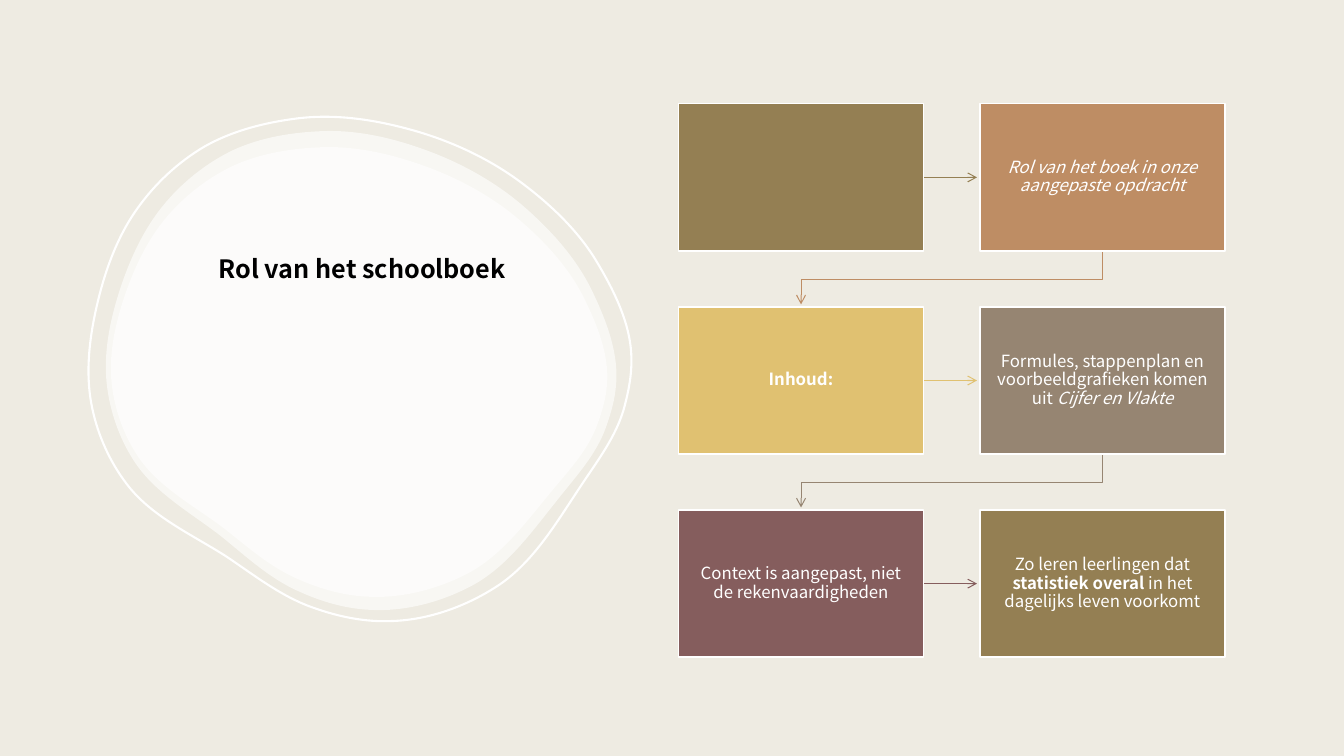
"""Builds the slide about the role of the textbook."""
from lxml import etree
from pptx import Presentation, util as u
from pptx.dml.color import RGBColor
from pptx.enum import shapes, text
from pptx.oxml.ns import qn

COLOURS = {"page": "EEEBE2", "white": "FFFFFF", "black": "000000", "olive": "947F53",
           "copper": "BE8D64", "gold": "E0C171", "taupe": "968572", "plum": "855D5D"}
FONT = "Noto Sans CJK JP"
WIDTH, HEIGHT = 13.33, 7.5
COLUMNS, ROWS = 2, 3
ARROW_WIDTH = 0.75

BLOB_WIDTH, BLOB_HEIGHT = 505, 475
BLOB_SIDES = {
    "upper left": [(216, 0), (125, 19), (59, 70), (15, 151)],
    "lower left": [(0, 252), (26, 326), (112, 401), (191, 457)],
    "lower right": [(261, 475), (364, 450), (446, 367), (495, 294)],
    "upper right": [(505, 252), (481, 158), (416, 77), (322, 21)]}

STEPS = [
    ("olive", []),
    ("copper", [("Rol van het boek in onze aangepaste opdracht", {"italic": True})]),
    ("gold", [("Inhoud:", {"bold": True})]),
    ("taupe", [("Formules, stappenplan en voorbeeldgrafieken komen uit ", {}),
               ("Cijfer en Vlakte", {"italic": True})]),
    ("plum", [("Context is aangepast, niet de rekenvaardigheden", {})]),
    ("olive", [("Zo leren leerlingen dat ", {}), ("statistiek overal", {"bold": True}),
               (" in het dagelijks leven voorkomt", {})])]


def colour(name):
    """Return the named colour."""
    return RGBColor.from_string(COLOURS[name])


def inches(*lengths):
    """Turn several lengths into inches."""
    return [u.Inches(length) for length in lengths]


def assign(target, values):
    """Set every attribute in a dict of values."""
    for name, value in values.items():
        setattr(target, name, value)


def paint(shape, fill=None, line=None, width=1):
    """Give a shape its fill and line, and no shadow."""
    shape.shadow.inherit = False
    for part, name in ((shape.fill, fill), (shape.line.fill, line)):
        if name:
            part.solid()
            part.fore_color.rgb = colour(name)
        else:
            part.background()
    if line:
        shape.line.width = u.Pt(width)


def write(para, spans, size, ink):
    """Write formatted spans into a paragraph."""
    for words, style in spans:
        span = para.add_run()
        span.text = words
        assign(span.font, {"name": FONT, "size": u.Pt(size), **style})
        span.font.color.rgb = colour(ink)


def add_arrowhead(arrow):
    """Put an open arrowhead at the end of a line."""
    outline = arrow.element.find(".//" + qn("a:ln"))
    etree.SubElement(outline, qn("a:tailEnd"), type="arrow")


def smooth_curves(anchors):
    """Return two handles and an end point for each curve of a smooth closed outline."""
    points = [complex(*anchor) for anchor in anchors]
    steps = [points[(i + 1) % len(points)] - point for i, point in enumerate(points)]
    headings = []
    for before, after in zip(steps[-1:] + steps, steps):
        heading = before / abs(before) ** 2 + after / abs(after) ** 2
        headings.append(heading / abs(heading))
    curves = []
    for i, (start, step) in enumerate(zip(points, steps)):
        end, reach = start + step, abs(step) / 3
        leave = start + headings[i] * reach
        arrive = end - headings[(i + 1) % len(points)] * reach
        curves += [(point.real, point.imag) for point in (leave, arrive, end)]
    return curves


def add_blob(page, left, top, width, height):
    """Draw the rounded outline with smooth curves in the given box."""
    anchors = sum(BLOB_SIDES.values(), [])
    scale = (u.Inches(width) / BLOB_WIDTH, u.Inches(height) / BLOB_HEIGHT)
    builder = page.shapes.build_freeform(*anchors[0], scale=scale)
    builder.add_line_segments(smooth_curves(anchors), close=True)
    blob = builder.convert_to_shape(*inches(left, top))
    route = blob.element.find(".//" + qn("a:path"))
    lines = route.findall(qn("a:lnTo"))
    for first in range(0, len(lines), 3):
        curve = etree.Element(qn("a:cubicBezTo"))
        lines[first].addprevious(curve)
        for line in lines[first:first + 3]:
            curve.append(line[0])
            route.remove(line)
    return blob


def add_title_area(page, left, top, width, height):
    """Place the layered white blob, its ring and the title."""
    for inset_x, inset_y, wide, high in ((0, 0, 5.05, 4.75), (0.05, 0.16, 4.91, 4.46)):
        layer = add_blob(page, left + inset_x, top + inset_y, wide, high)
        paint(layer, "white")
        tint = layer.element.find(".//" + qn("a:solidFill"))[0]
        etree.SubElement(tint, qn("a:alpha"), val="60000")
    ring = add_blob(page, left - 0.17, top - 0.17, width + 0.32, height + 0.3)
    paint(ring, line="white", width=1.5)
    ring.rotation = 355
    title = page.shapes.add_textbox(*inches(left + 0.2 * width, top + 1.16, 3.3, 0.4))
    assign(title.text_frame, {"word_wrap": False,
                              "auto_size": text.MSO_AUTO_SIZE.SHAPE_TO_FIT_TEXT})
    write(title.text_frame.paragraphs[0], [("Rol van het schoolboek", {"bold": True})],
          18, "black")


def add_step(page, left, top, width, height, fill, spans):
    """Place one step box with its centred text."""
    step = page.shapes.add_shape(shapes.MSO_SHAPE.RECTANGLE,
                                 *inches(left, top, width, height))
    paint(step, fill, "white")
    margins = {f"margin_{side}": u.Inches(0.12) for side in ("left", "right", "top", "bottom")}
    assign(step.text_frame, {"word_wrap": True, **margins,
                             "vertical_anchor": text.MSO_ANCHOR.MIDDLE})
    para = step.text_frame.paragraphs[0]
    assign(para, {"alignment": text.PP_ALIGN.CENTER, "line_spacing": 0.9,
                  "space_after": u.Pt(4.2)})
    write(para, spans, 12, "white")


def add_straight_arrow(page, left, middle, length, ink):
    """Draw an arrow to the step on the right."""
    arrow = page.shapes.add_connector(shapes.MSO_CONNECTOR.STRAIGHT,
                                      *inches(left, middle, left + length, middle))
    assign(arrow.line, {"width": u.Pt(ARROW_WIDTH)})
    arrow.line.color.rgb = colour(ink)
    add_arrowhead(arrow)
    etree.SubElement(arrow.element.spPr, qn("a:effectLst"))


def add_return_arrow(page, start, end, top, length, ink):
    """Draw a bent arrow back to the first step of the next row."""
    bend = top + 0.53 * length
    builder = page.shapes.build_freeform(*inches(start, top))
    corners = [(start, bend), (end, bend), (end, top + length)]
    builder.add_line_segments([inches(*corner) for corner in corners], close=False)
    arrow = builder.convert_to_shape()
    paint(arrow, line=ink, width=ARROW_WIDTH)
    add_arrowhead(arrow)


def add_step_grid(page, left, top, width, height):
    """Place the steps in a grid, joined by arrows in reading order."""
    box_width, box_height = 2.43, 1.46
    column_pitch = (width - box_width) / (COLUMNS - 1)
    row_pitch = (height - box_height) / (ROWS - 1)
    reach = column_pitch - box_width - 0.03
    for index, (fill, spans) in enumerate(STEPS):
        row, column = divmod(index, COLUMNS)
        x, y = left + column * column_pitch, top + row * row_pitch
        if column < COLUMNS - 1:
            add_straight_arrow(page, x + box_width, y + box_height / 2, reach, fill)
        elif row < ROWS - 1:
            add_return_arrow(page, x + box_width / 2, left + box_width / 2,
                             y + box_height, reach, fill)
        add_step(page, x, y, box_width, box_height, fill, spans)


def main():
    """Build and save the deck."""
    deck = Presentation()
    assign(deck, {"slide_width": u.Inches(WIDTH), "slide_height": u.Inches(HEIGHT)})
    page = deck.slides.add_slide(deck.slide_layouts[6])
    page.background.fill.solid()
    page.background.fill.fore_color.rgb = colour("page")
    add_title_area(page, 1.06, 1.3, 5.05, 4.75)
    add_step_grid(page, 6.73, 1.03, 5.42, 5.49)
    deck.save("out.pptx")


if __name__ == "__main__":
    main()
